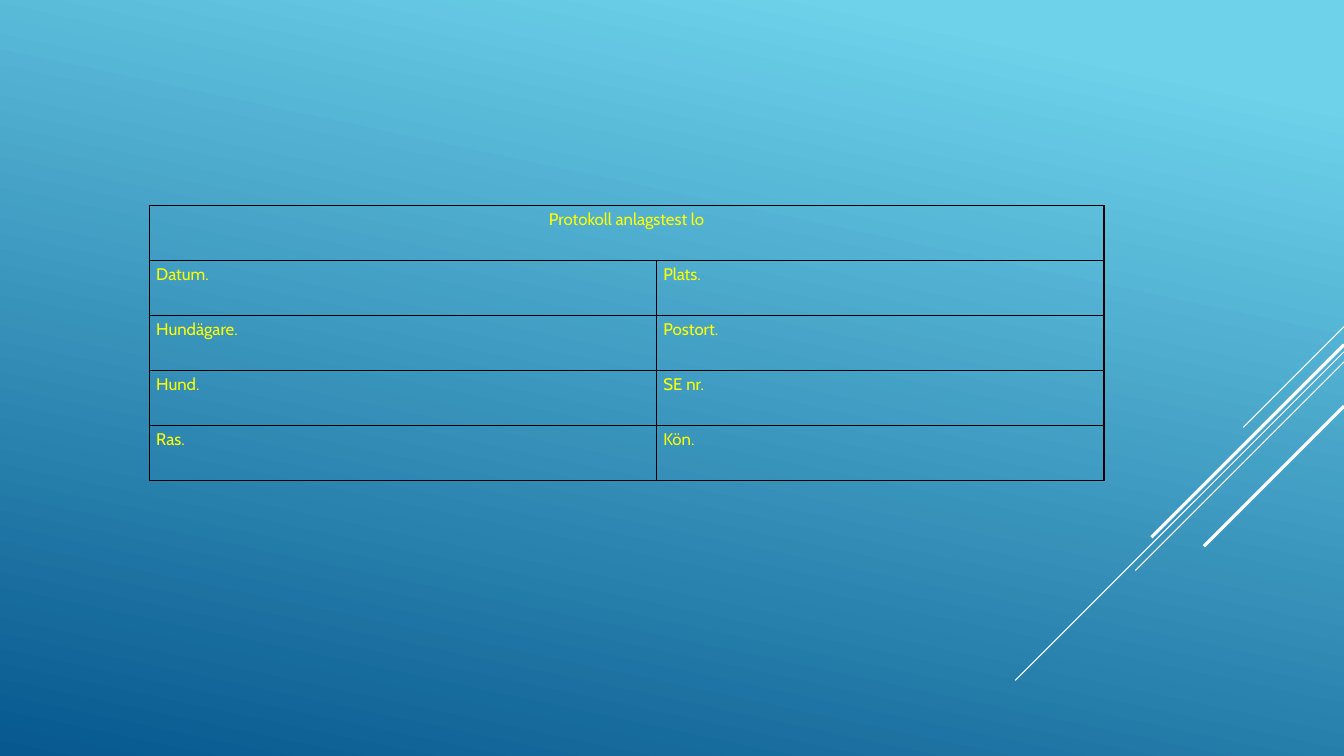
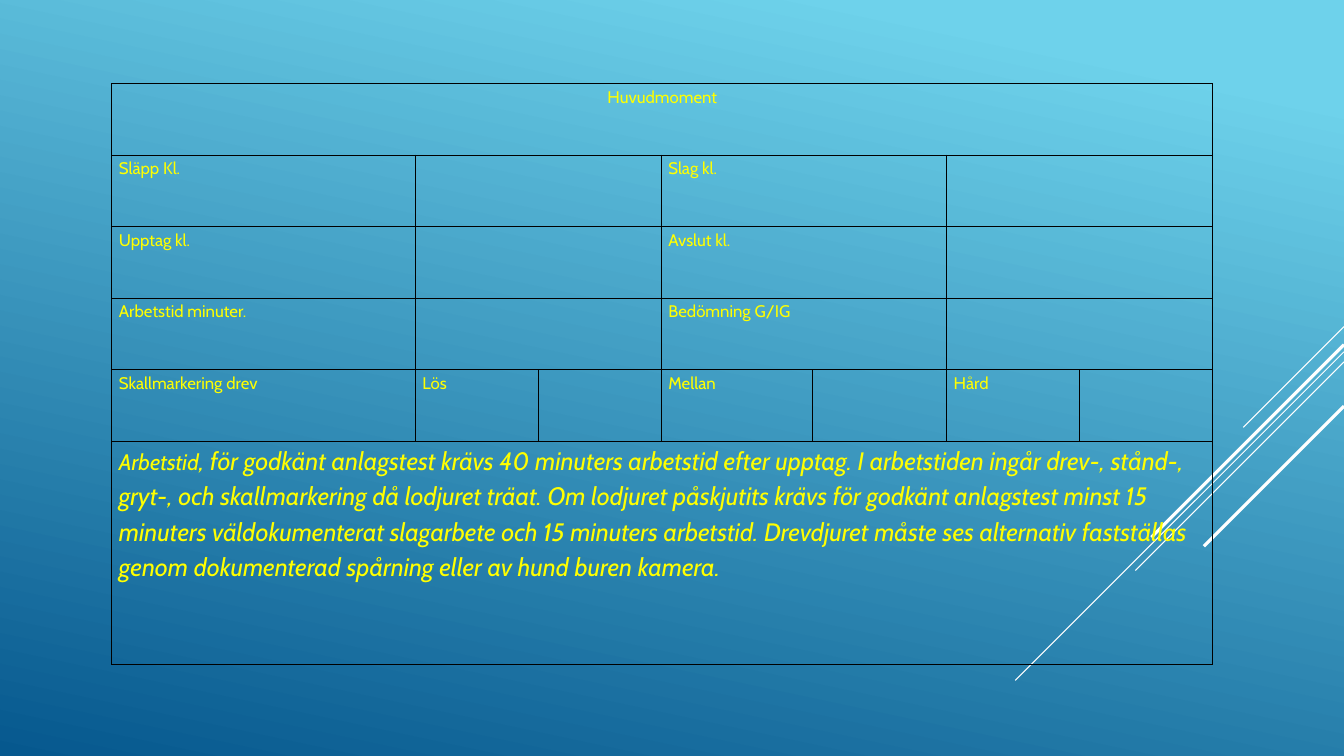
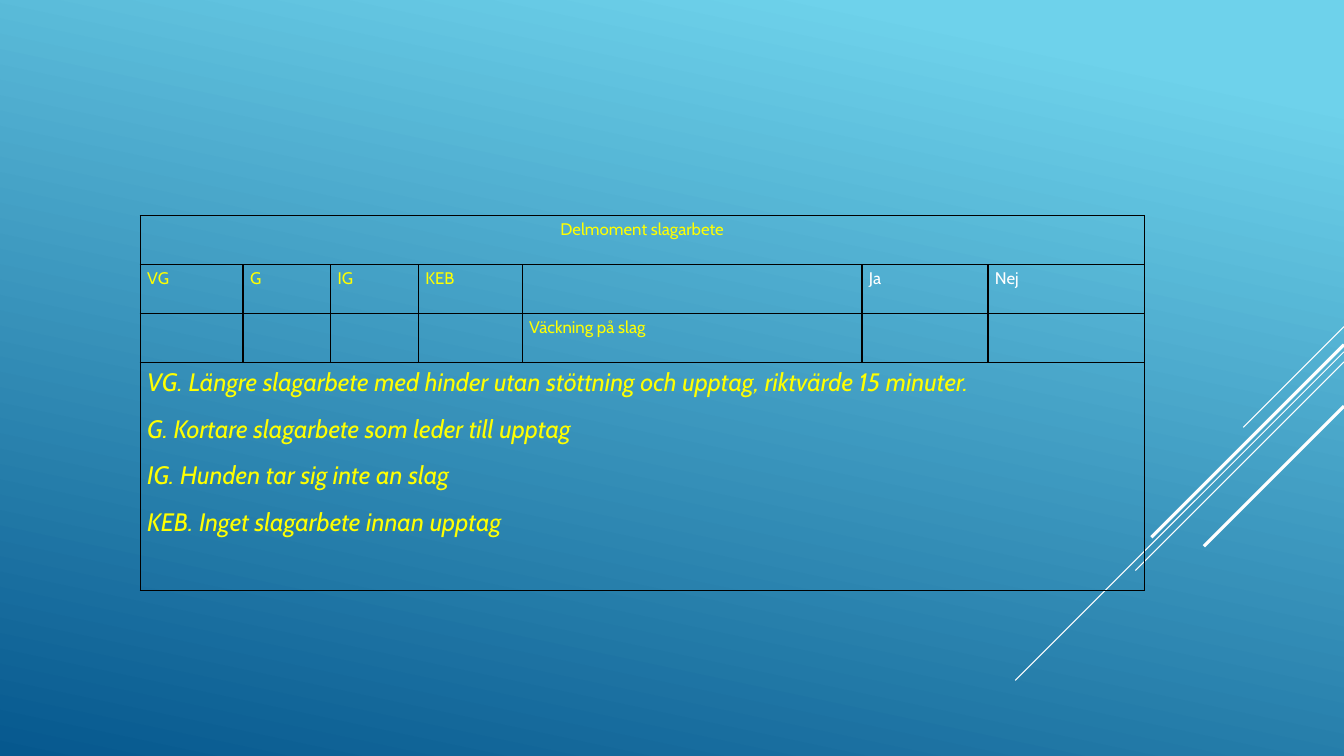
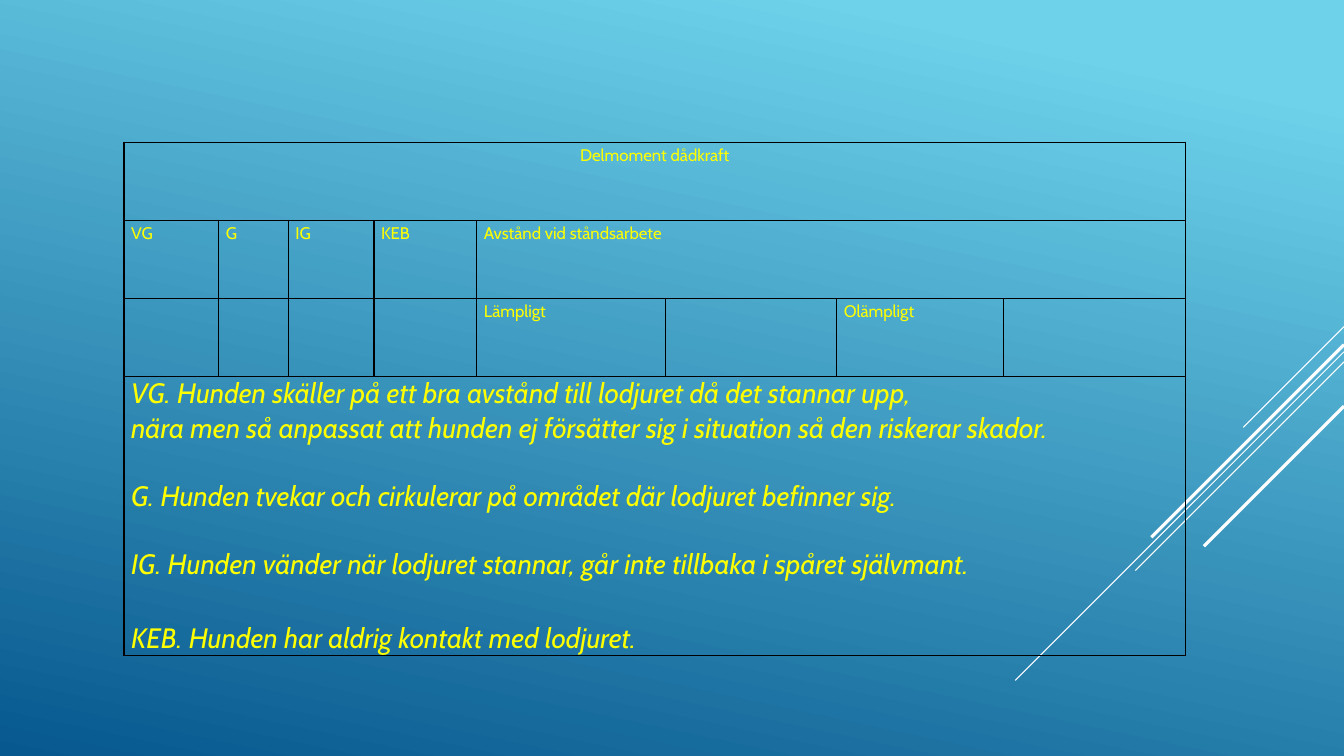
import dataclasses
import itertools

import lxml.etree
import pptx
import pptx.dml.color
import pptx.enum.shapes
import pptx.enum.text
import pptx.oxml.ns
import pptx.util

Inches = pptx.util.Inches
Pt = pptx.util.Pt


@dataclasses.dataclass(frozen=True)
class Theme:
    font: str = "Cabin"
    text: str = "FFFF00"
    white: str = "FFFFFF"
    border: str = "000000"
    gradient: tuple = ((0.1, "6ED2EB"), (1, "06588E"))
    gradient_angle: int = 258  # counter-clockwise
    label_size: int = 12
    lead_size: int = 16
    note_size: int = 18
    large_note_size: int = 20
    line_spacing: float = 1.15
    space_after: int = 8
    blank_line: float = 24.4
    border_width: int = 1


THEME = Theme()
SLIDE_WIDTH, SLIDE_HEIGHT = 13.33, 7.5

# Diagonal rays: start height on the right edge, length along each axis, width
RAYS = [
    (3.24, 1, 0.75),
    (3.49, 3.26, 0.75),
    (3.59, 2.07, 0.75),
    (3.42, 1.91, 2.25),
    (4.03, 1.39, 2.25),
]


@dataclasses.dataclass(frozen=True)
class NoteLine:
    runs: tuple  # (text, size) pairs
    line_spacing: float = THEME.line_spacing
    space_before: float = 0
    space_after: float = THEME.space_after


def plain_line(text, space_before=0):
    return NoteLine(((text, THEME.large_note_size),), 1, space_before, 0)


# Content: None in a row continues the cell to its left
FORMS = [
    {
        "title": "Protokoll anlagstest lo",
        "position": (1.48, 2.04),
        "height": 2.73,
        "columns": [5.03, 4.44],
        "rows": [
            ["Datum.", "Plats."],
            ["Hundägare.", "Postort."],
            ["Hund.", "SE nr."],
            ["Ras.", "Kön."],
        ],
    },
    {
        "title": "Huvudmoment",
        "position": (1.11, 0.83),
        "height": 5.76,
        "columns": [3.01, 1.22, 1.22, 1.5, 1.33, 1.32, 1.32],
        "rows": [
            ["Släpp Kl.", "", None, "Slag kl.", None, "", None],
            ["Upptag kl.", "", None, "Avslut kl.", None, "", None],
            ["Arbetstid minuter.", "", None, "Bedömning G/IG", None, "", None],
            ["Skallmarkering drev", "Lös", "", "Mellan", "", "Hård", ""],
        ],
        "note_height": 2.21,
        "note": [
            NoteLine((
                ("Arbetstid", THEME.lead_size),
                (", för godkänt anlagstest krävs 40 minuters arbetstid efter upptag. "
                 "I arbetstiden ingår drev-, stånd-, gryt-, och skallmarkering då "
                 "lodjuret träat. Om lodjuret påskjutits krävs för godkänt anlagstest "
                 "minst 15 minuters väldokumenterat slagarbete och 15 minuters "
                 "arbetstid. Drevdjuret måste ses alternativ fastställas genom "
                 "dokumenterad spårning eller av hund buren kamera.", THEME.note_size),
            )),
        ],
    },
    {
        "title": "Delmoment slagarbete",
        "position": (1.39, 2.14),
        "height": 3.72,
        "columns": [1.02, 0.87, 0.87, 1.03, 3.37, 1.25, 1.55],
        "rows": [
            ["VG", "G", "IG", "KEB", "", "Ja", "Nej"],
            ["", "", "", "", "Väckning på slag", "", ""],
        ],
        "white_labels": ("Ja", "Nej"),
        "note_height": 2.26,
        "note": [
            NoteLine(((text, THEME.note_size),))
            for text in (
                "VG. Längre slagarbete med hinder utan stöttning och upptag, "
                "riktvärde 15 minuter.",
                "G. Kortare slagarbete som leder till upptag",
                "IG. Hunden tar sig inte an slag",
                "KEB. Inget slagarbete innan upptag",
            )
        ],
    },
    {
        "title": "Delmoment dådkraft",
        "position": (1.23, 1.41),
        "height": 5.04,
        "columns": [0.94, 0.69, 0.85, 1.02, 1.87, 1.7, 1.65, 1.81],
        "rows": [
            ["VG", "G", "IG", "KEB", "Avstånd vid ståndsarbete", None, None, None],
            ["", "", "", "", "Lämpligt", "", "Olämpligt", ""],
        ],
        "note_height": 2.71,
        "note": [
            plain_line("VG. Hunden skäller på ett bra avstånd till lodjuret "
                       "då det stannar upp,"),
            plain_line("nära men så anpassat att hunden ej försätter sig i situation "
                       "så den riskerar skador."),
            plain_line("G. Hunden tvekar och cirkulerar på området där lodjuret "
                       "befinner sig.", THEME.blank_line),
            plain_line("IG. Hunden vänder när lodjuret stannar, går inte tillbaka "
                       "i spåret självmant.", THEME.blank_line),
            NoteLine((("KEB. Hunden har aldrig kontakt med lodjuret.",
                       THEME.large_note_size),), space_before=THEME.blank_line),
        ],
    },
]


def rgb(value):
    return pptx.dml.color.RGBColor.from_string(value)


# Shared backdrop
def set_background(master):
    fill = master.background.fill
    fill.gradient()
    fill.gradient_angle = THEME.gradient_angle
    for stop, (position, color) in zip(fill.gradient_stops, THEME.gradient):
        stop.position = position
        stop.color.rgb = rgb(color)


def add_rays(slide):
    for top, length, width in RAYS:
        ray = slide.shapes.add_connector(
            pptx.enum.shapes.MSO_CONNECTOR.STRAIGHT,
            Inches(SLIDE_WIDTH), Inches(top),
            Inches(SLIDE_WIDTH - length), Inches(top + length))
        ray.line.color.rgb = rgb(THEME.white)
        ray.line.width = Pt(width)
        lxml.etree.SubElement(ray._element.spPr, pptx.oxml.ns.qn("a:effectLst"))


# Table cells
def style_cell(cell):
    cell.margin_left = cell.margin_right = Inches(0.07)
    cell.margin_top = cell.margin_bottom = 0
    properties = cell._tc.get_or_add_tcPr()
    for side in ("lnL", "lnR", "lnT", "lnB"):
        border = lxml.etree.SubElement(properties, pptx.oxml.ns.qn(f"a:{side}"),
                                       w=str(Pt(THEME.border_width)))
        fill = lxml.etree.SubElement(border, pptx.oxml.ns.qn("a:solidFill"))
        lxml.etree.SubElement(fill, pptx.oxml.ns.qn("a:srgbClr"), val=THEME.border)
    cell.fill.background()


def write_line(paragraph, line, color=THEME.text, italic=False):
    paragraph.line_spacing = line.line_spacing
    paragraph.space_after = Pt(line.space_after)
    if line.space_before:
        paragraph.space_before = Pt(line.space_before)
    for text, size in line.runs:
        run = paragraph.add_run()
        run.text = text
        run.font.name = THEME.font
        run.font.size = Pt(size)
        run.font.italic = italic
        run.font.color.rgb = rgb(color)


def write_note(cell, lines):
    for index, line in enumerate(lines):
        frame = cell.text_frame
        paragraph = frame.add_paragraph() if index else frame.paragraphs[0]
        write_line(paragraph, line, italic=True)


def add_form(slide, form):
    columns, note = form["columns"], form.get("note")
    continued = [None] * (len(columns) - 1)
    grid = [[form["title"], *continued], *form["rows"]]
    label_height = (form["height"] - form.get("note_height", 0)) / len(grid)
    heights = [label_height] * len(grid)
    if note:
        grid.append(["", *continued])
        heights.append(form["note_height"])

    left, top = form["position"]
    table = slide.shapes.add_table(
        len(grid), len(columns), Inches(left), Inches(top),
        Inches(sum(columns)), Inches(form["height"])).table
    table.first_row = table.horz_banding = False
    for column, width in zip(table.columns, columns):
        column.width = Inches(width)
    for row, height in zip(table.rows, heights):
        row.height = Inches(height)
    for cell in table.iter_cells():
        style_cell(cell)

    for row_index, labels in enumerate(grid):
        for column_index, label in enumerate(labels):
            if label is None:
                continue
            cell = table.cell(row_index, column_index)
            span = len(list(itertools.takewhile(
                lambda following: following is None, labels[column_index + 1:])))
            if span:
                cell.merge(table.cell(row_index, column_index + span))
            if label:
                white = label in form.get("white_labels", ())
                write_line(cell.text_frame.paragraphs[0],
                           NoteLine(((label, THEME.label_size),)),
                           THEME.white if white else THEME.text)

    title = table.cell(0, 0).text_frame.paragraphs[0]
    title.alignment = pptx.enum.text.PP_ALIGN.CENTER
    if note:
        write_note(table.cell(len(grid) - 1, 0), note)


def main():
    presentation = pptx.Presentation()
    presentation.slide_width = Inches(SLIDE_WIDTH)
    presentation.slide_height = Inches(SLIDE_HEIGHT)
    set_background(presentation.slide_master)
    for form in FORMS:
        slide = presentation.slides.add_slide(presentation.slide_layouts[6])
        add_rays(slide)
        add_form(slide, form)
    presentation.save("out.pptx")


if __name__ == "__main__":
    main()
